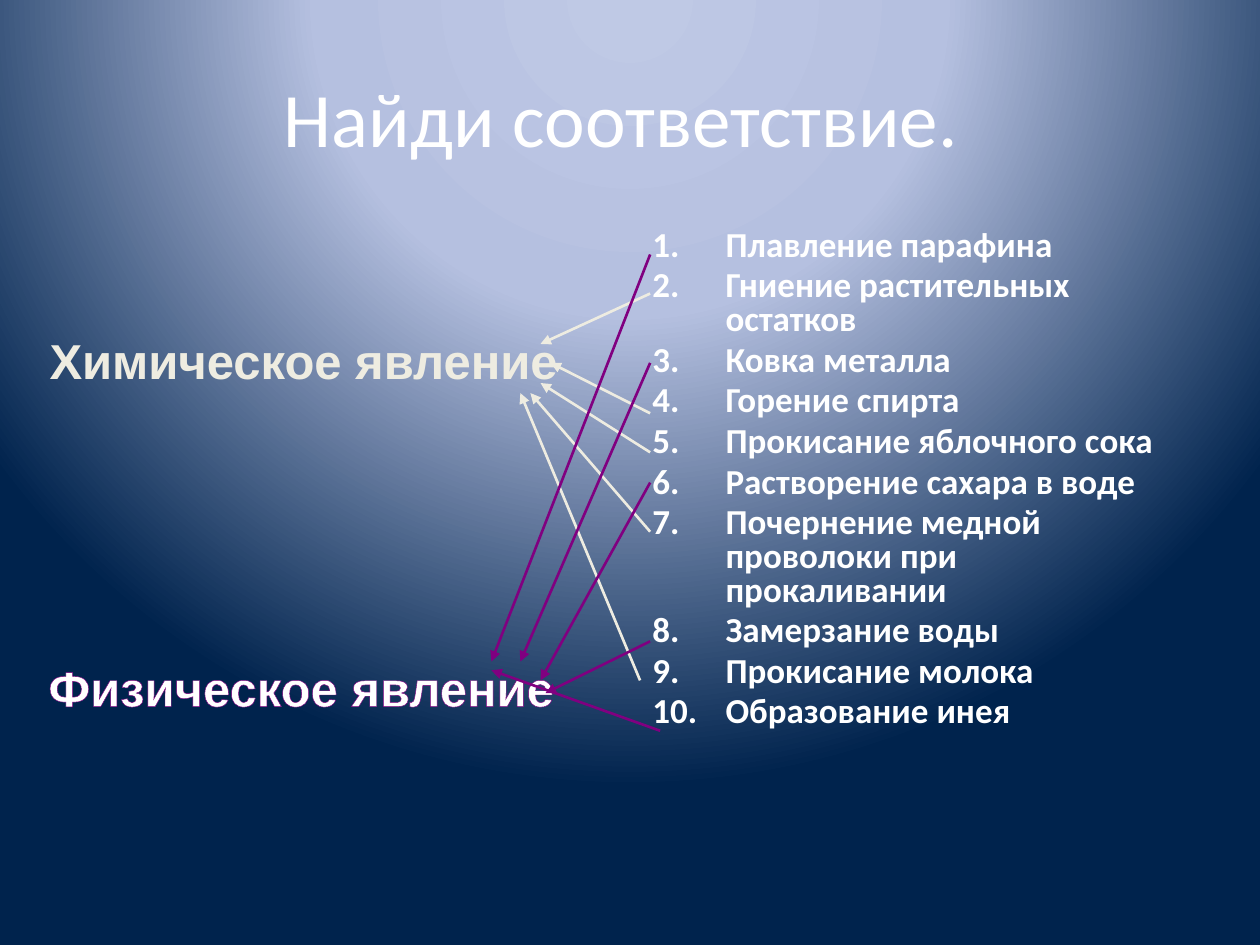
import pptx
import pptx.util
import pptx.oxml
import pptx.oxml.ns
import pptx.dml.color
import pptx.enum.shapes
import pptx.enum.text

Inches = pptx.util.Inches
Pt = pptx.util.Pt
RGBColor = pptx.dml.color.RGBColor
Align = pptx.enum.text.PP_ALIGN
Anchor = pptx.enum.text.MSO_ANCHOR

WHITE = RGBColor(0xFF, 0xFF, 0xFF)
CREAM = RGBColor(0xEE, 0xEC, 0xE1)
PURPLE = RGBColor(0x80, 0x00, 0x80)
GRADIENT_STOPS = [
    (0, RGBColor(0xBF, 0xC9, 0xE5)),
    (40, RGBColor(0xB5, 0xC0, 0xE0)),
    (100, RGBColor(0x00, 0x23, 0x4D)),
]
NAMESPACE = pptx.oxml.ns.nsdecls("a")

PHENOMENA = [
    "Плавление парафина",
    "Гниение растительных остатков",
    "Ковка металла",
    "Горение спирта",
    "Прокисание яблочного сока",
    "Растворение сахара в воде",
    "Почернение медной проволоки при прокаливании",
    "Замерзание воды",
    "Прокисание молока",
    "Образование инея",
]
CHEMICAL_ARROWS = [
    ((5.16, 2.33), (4.29, 2.73)),
    ((5.16, 3.28), (4.37, 2.88)),
    ((5.16, 3.59), (4.29, 3.04)),
    ((5.16, 4.22), (4.21, 3.12)),
    ((5.08, 5.4), (4.13, 3.12)),
]
PHYSICAL_ARROWS = [
    ((5.16, 2.02), (3.9, 5.25)),
    ((5.16, 2.88), (4.13, 5.25)),
    ((5.16, 3.83), (4.29, 5.4)),
    ((5.24, 5.8), (3.9, 5.32)),
    ((5.16, 5.09), (4.33, 5.5)),
]


def set_background(slide):
    fill = slide.background.fill
    fill.gradient()
    stops = "".join(
        f'<a:gs pos="{position * 1000}"><a:srgbClr val="{color}"/></a:gs>'
        for position, color in GRADIENT_STOPS
    )
    gradient = pptx.oxml.parse_xml(
        f'<a:gradFill {NAMESPACE} rotWithShape="1"><a:gsLst>{stops}</a:gsLst>'
        '<a:path path="circle"><a:fillToRect l="50000" t="-80000" r="50000" b="180000"/>'
        "</a:path></a:gradFill>"
    )
    properties = slide.background._cSld.bg.bgPr
    previous = properties.find(pptx.oxml.ns.qn("a:gradFill"))
    properties.replace(previous, gradient)


def add_text(slide, box, lines, font_format, paragraph_format, frame_format):
    shape = slide.shapes.add_textbox(*map(Inches, box))
    frame = shape.text_frame
    for name, value in frame_format.items():
        setattr(frame, name, value)
    frame.text = "\n".join(lines)
    for paragraph in frame.paragraphs:
        for name, value in paragraph_format.items():
            setattr(paragraph, name, value)
        font = paragraph.runs[0].font
        font.color.rgb = font_format["color"]
        for name in ("name", "size", "bold"):
            setattr(font, name, font_format[name])
    return frame


def add_title(slide):
    add_text(
        slide, (0.5, 0.3, 9, 1.25), ["Найди соответствие. "],
        {"name": "Calibri", "size": Pt(44), "bold": False, "color": WHITE},
        {"alignment": Align.CENTER},
        {"word_wrap": True, "vertical_anchor": Anchor.MIDDLE},
    )


def add_numbered_list(slide):
    frame = add_text(
        slide, (5.08, 1.78, 4.42, 4.95), PHENOMENA,
        {"name": "Calibri", "size": Pt(20), "bold": True, "color": WHITE},
        {"line_spacing": 0.8, "space_before": Pt(4)},
        {"word_wrap": True},
    )
    for paragraph in frame.paragraphs:
        properties = paragraph._p.get_or_add_pPr()
        properties.set("marL", str(Inches(0.58)))
        properties.set("indent", str(-Inches(0.58)))
        properties.append(
            pptx.oxml.parse_xml(f'<a:buAutoNum {NAMESPACE} type="arabicPeriod"/>')
        )


def add_category(slide, left, top, text, color, outline_color):
    frame = add_text(
        slide, (left, top, 4.3, 0.55), [text],
        {"name": "Arial", "size": Pt(28), "bold": True, "color": color},
        {"alignment": Align.CENTER},
        {"word_wrap": False},
    )
    outline = pptx.oxml.parse_xml(
        f'<a:ln {NAMESPACE} w="{Pt(1.5)}"><a:solidFill>'
        f'<a:srgbClr val="{outline_color}"/></a:solidFill></a:ln>'
    )
    frame.paragraphs[0].runs[0]._r.get_or_add_rPr().insert(0, outline)


def add_arrow(slide, start, end, color):
    connector = slide.shapes.add_connector(
        pptx.enum.shapes.MSO_CONNECTOR.STRAIGHT, *map(Inches, start + end)
    )
    connector.line.color.rgb = color
    connector.line.width = Pt(1.5)
    connector.line._get_or_add_ln().append(
        pptx.oxml.parse_xml(f'<a:tailEnd {NAMESPACE} type="triangle"/>')
    )
    connector._element.spPr.append(pptx.oxml.parse_xml(f"<a:effectLst {NAMESPACE}/>"))


def main():
    presentation = pptx.Presentation()
    presentation.slide_width = Inches(10)
    presentation.slide_height = Inches(7.5)
    slide = presentation.slides.add_slide(presentation.slide_layouts[6])
    set_background(slide)
    add_title(slide)
    add_numbered_list(slide)
    add_category(slide, 0.24, 5.17, "Физическое явление", WHITE, PURPLE)
    add_category(slide, 0.26, 2.57, "Химическое явление", CREAM, CREAM)
    for color, arrows in ((CREAM, CHEMICAL_ARROWS), (PURPLE, PHYSICAL_ARROWS)):
        for start, end in arrows:
            add_arrow(slide, start, end, color)
    presentation.save("out.pptx")


if __name__ == "__main__":
    main()
